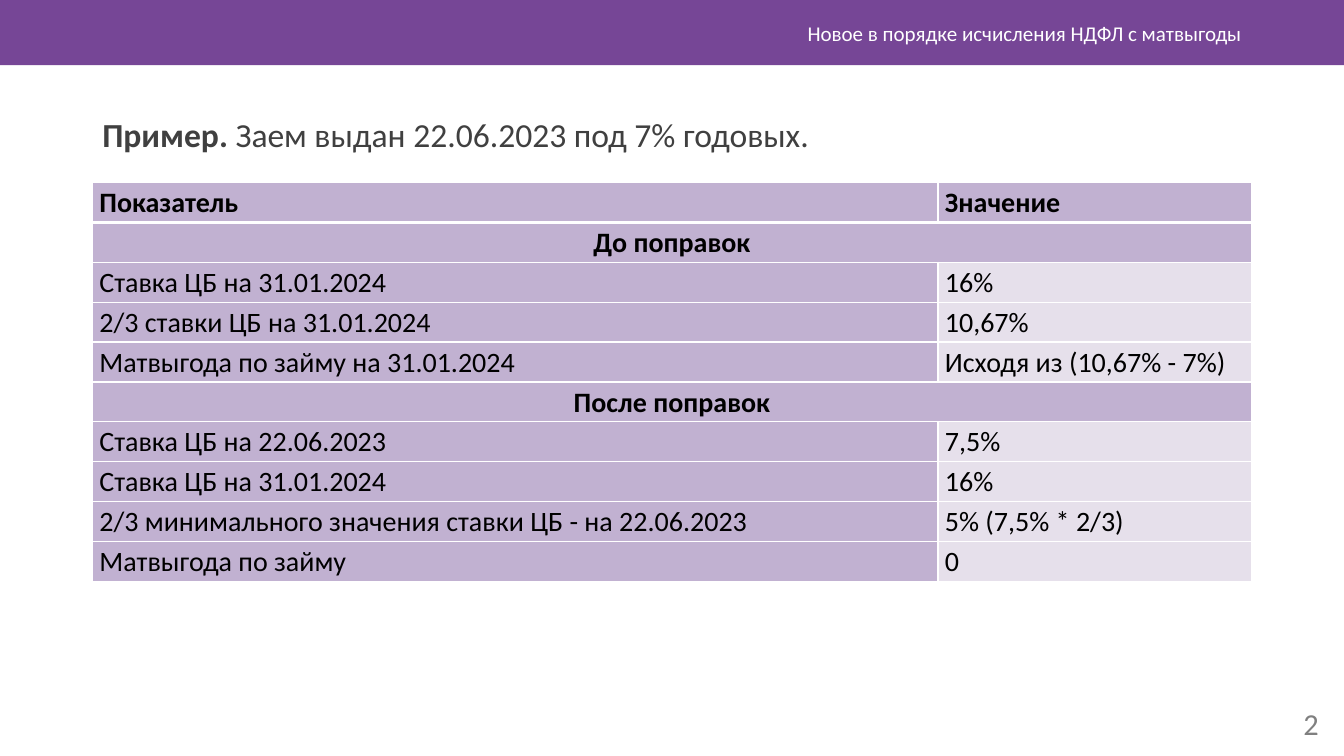
from lxml import etree
from pptx import Presentation
from pptx.dml.color import RGBColor
from pptx.enum.shapes import MSO_SHAPE
from pptx.enum.text import MSO_ANCHOR, PP_ALIGN
from pptx.oxml.ns import qn
from pptx.util import Pt

RECTANGLE = MSO_SHAPE.RECTANGLE
TOP, MIDDLE = MSO_ANCHOR.TOP, MSO_ANCHOR.MIDDLE
LEFT, CENTER, RIGHT, JUSTIFY = PP_ALIGN.LEFT, PP_ALIGN.CENTER, PP_ALIGN.RIGHT, PP_ALIGN.JUSTIFY

THEME = {
    "font": "Calibri",
    "band": "764696",
    "label_fill": "C1B1D1",
    "value_fill": "E6E0EB",
    "white": "FFFFFF",
    "black": "000000",
    "body": "404040",
    "muted": "808080",
    "header_size": 15,
    "body_size": 24,
    "table_size": 20,
    "number_size": 21.7,
}


def write_text(frame, *spans, size, color, align=LEFT, anchor=TOP, spacing=1.0):
    frame.word_wrap = True
    frame.vertical_anchor = anchor
    para = frame.paragraphs[0]
    para.alignment = align
    para.line_spacing = spacing
    for text, bold in spans:
        span = para.add_run()
        span.text = text
        span.font.name = THEME["font"]
        span.font.size = Pt(size)
        span.font.bold = bold
        span.font.color.rgb = RGBColor.from_string(color)


def set_borders(cell, **widths):
    properties = cell._tc.get_or_add_tcPr()
    for side, width in widths.items():
        line = etree.SubElement(properties, qn(f"a:ln{side}"), w=str(Pt(width)))
        fill = etree.SubElement(line, qn("a:solidFill"))
        etree.SubElement(fill, qn("a:srgbClr"), val=THEME["white"])


deck = Presentation()
deck.slide_width, deck.slide_height = Pt(960), Pt(540)
page = deck.slides.add_slide(deck.slide_layouts[6])

band = page.shapes.add_shape(RECTANGLE, 0, 0, deck.slide_width, Pt(46.5))
band.shadow.inherit = False
band.fill.solid()
band.fill.fore_color.rgb = RGBColor.from_string(THEME["band"])
band.line.fill.background()

header = page.shapes.add_textbox(Pt(255), Pt(9), Pt(639), Pt(29))
write_text(header.text_frame, ("Новое в порядке исчисления НДФЛ с матвыгоды", False),
           size=THEME["header_size"], color=THEME["white"], align=RIGHT, anchor=MIDDLE)

number = page.shapes.add_textbox(Pt(901), Pt(502), Pt(48), Pt(29))
write_text(number.text_frame, ("2", False),
           size=THEME["number_size"], color=THEME["muted"], align=RIGHT, anchor=MIDDLE)

example = page.shapes.add_textbox(Pt(66), Pt(81.4), Pt(828), Pt(40))
write_text(example.text_frame, ("Пример. ", True),
           ("Заем выдан 22.06.2023 под 7% годовых.", False),
           size=THEME["body_size"], color=THEME["body"], spacing=0.9)

rows = [
    ("Показатель", "Значение"),
    ("До поправок",),
    ("Ставка ЦБ на 31.01.2024", "16%"),
    ("2/3 ставки ЦБ на 31.01.2024", "10,67%"),
    ("Матвыгода по займу на 31.01.2024", "Исходя из (10,67% - 7%)"),
    ("После поправок",),
    ("Ставка ЦБ на 22.06.2023", "7,5%"),
    ("Ставка ЦБ на 31.01.2024", "16%"),
    ("2/3 минимального значения ставки ЦБ - на 22.06.2023", "5% (7,5% * 2/3)"),
    ("Матвыгода по займу", "0"),
]
row_height = 28.5
table = page.shapes.add_table(len(rows), 2, Pt(66), Pt(130.4),
                              Pt(828), Pt(row_height * len(rows))).table
table.horz_banding = False
table.columns[0].width, table.columns[1].width = Pt(604), Pt(224)

for row_index, texts in enumerate(rows):
    table.rows[row_index].height = Pt(row_height)
    is_section = len(texts) == 1
    is_heading = row_index == 0 or is_section
    if is_section:
        table.cell(row_index, 0).merge(table.cell(row_index, 1))
    for column_index, cell in enumerate(table.rows[row_index].cells):
        set_borders(cell, L=1, R=1, T=3 if row_index == 1 else 1, B=3 if row_index == 0 else 1)
        is_label = is_heading or column_index == 0
        cell.fill.solid()
        cell.fill.fore_color.rgb = RGBColor.from_string(
            THEME["label_fill" if is_label else "value_fill"])
        cell.margin_left = cell.margin_right = Pt(5)
        cell.margin_top, cell.margin_bottom = Pt(0.7), 0
        if column_index < len(texts):
            write_text(cell.text_frame, (texts[column_index], is_heading),
                       size=THEME["table_size"], color=THEME["black"],
                       align=CENTER if is_section else JUSTIFY, spacing=1.07)

deck.save("out.pptx")
